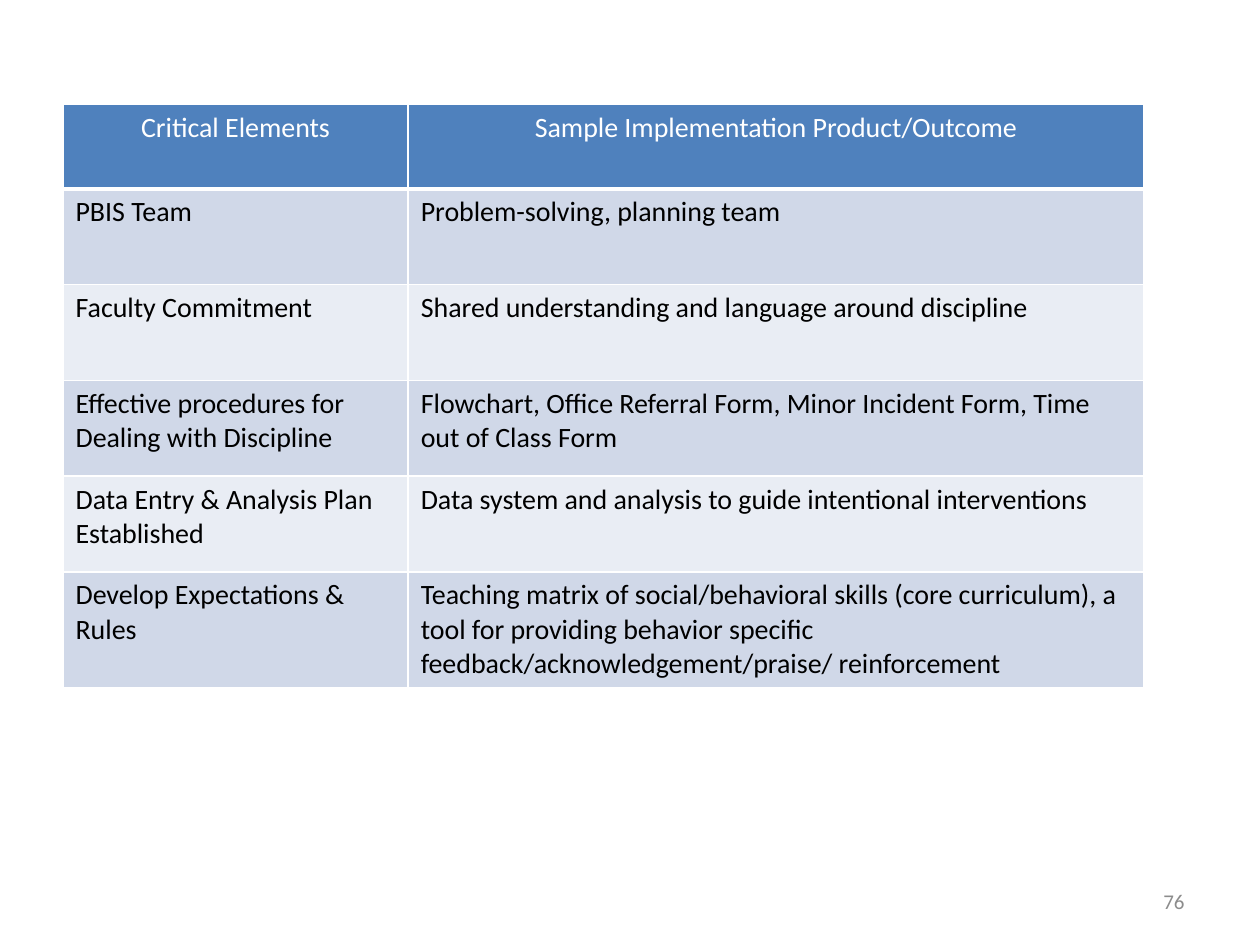
import pptx
import pptx.dml.color
import pptx.enum.text
import pptx.oxml
import pptx.oxml.ns
import pptx.util
from pptx.util import Inches

COLORS = {
    "header": "4F81BD",
    "band_dark": "D0D8E8",
    "band_light": "E9EDF4",
    "white": "FFFFFF",
    "black": "000000",
    "gray": "8C8C8C",
}
ALIGN = pptx.enum.text.PP_ALIGN
ANCHOR = pptx.enum.text.MSO_ANCHOR


def write_text(text_frame, text, size, color, alignment):
    paragraph = text_frame.paragraphs[0]
    paragraph.alignment = alignment
    run = paragraph.add_run()
    run.text = text
    font_format = {"name": "Calibri", "size": pptx.util.Pt(size), "bold": False}
    for name, value in font_format.items():
        setattr(run.font, name, value)
    run.font.color.rgb = pptx.dml.color.RGBColor.from_string(COLORS[color])


def add_borders(cell, widths):
    properties = cell._tc.get_or_add_tcPr()
    for index, (side, width) in enumerate(widths.items()):
        line = pptx.oxml.parse_xml(
            f'<a:ln{side} {pptx.oxml.ns.nsdecls("a")} w="{pptx.util.Pt(width)}">'
            f'<a:solidFill><a:srgbClr val="{COLORS["white"]}"/></a:solidFill>'
            f"</a:ln{side}>"
        )
        properties.insert(index, line)


presentation = pptx.Presentation()
presentation.slide_width = Inches(10)
presentation.slide_height = Inches(7.5)
slide = presentation.slides.add_slide(presentation.slide_layouts[6])

# Table of critical elements and their outcomes
rows = [
    ("Critical Elements", "Sample Implementation Product/Outcome"),
    ("PBIS Team", "Problem-solving, planning team"),
    ("Faculty Commitment", "Shared understanding and language around discipline"),
    ("Effective procedures for Dealing with Discipline",
     "Flowchart, Office Referral Form, Minor Incident Form, Time out of Class Form"),
    ("Data Entry & Analysis Plan Established",
     "Data system and analysis to guide intentional interventions"),
    ("Develop Expectations & Rules",
     "Teaching matrix of social/behavioral skills (core curriculum), a tool for "
     "providing behavior specific feedback/acknowledgement/praise/ reinforcement"),
]
column_widths = [2.74, 5.84]
row_heights = [0.67] + [0.76] * (len(rows) - 1)
table = slide.shapes.add_table(
    len(rows), len(column_widths), Inches(0.5), Inches(0.83),
    Inches(sum(column_widths)), Inches(sum(row_heights)),
).table
for column, width in zip(table.columns, column_widths):
    column.width = Inches(width)

for row_index, texts in enumerate(rows):
    table.rows[row_index].height = Inches(row_heights[row_index])
    if row_index == 0:
        fill, color, alignment = "header", "white", ALIGN.CENTER
    else:
        fill = "band_dark" if row_index % 2 else "band_light"
        color, alignment = "black", ALIGN.LEFT
    # The rule under the header is thicker than the others
    borders = {"L": 1, "R": 1, "T": 3 if row_index == 1 else 1,
               "B": 3 if row_index == 0 else 1}
    for column_index, text in enumerate(texts):
        cell = table.cell(row_index, column_index)
        cell.fill.solid()
        cell.fill.fore_color.rgb = pptx.dml.color.RGBColor.from_string(COLORS[fill])
        add_borders(cell, borders)
        write_text(cell.text_frame, text, 16, color, alignment)

# Slide number
number_box = slide.shapes.add_textbox(Inches(7.17), Inches(6.95), Inches(2.33), Inches(0.4))
frame_format = {"word_wrap": True, "vertical_anchor": ANCHOR.MIDDLE}
for name, value in frame_format.items():
    setattr(number_box.text_frame, name, value)
write_text(number_box.text_frame, "76", 12, "gray", ALIGN.RIGHT)

presentation.save("out.pptx")
